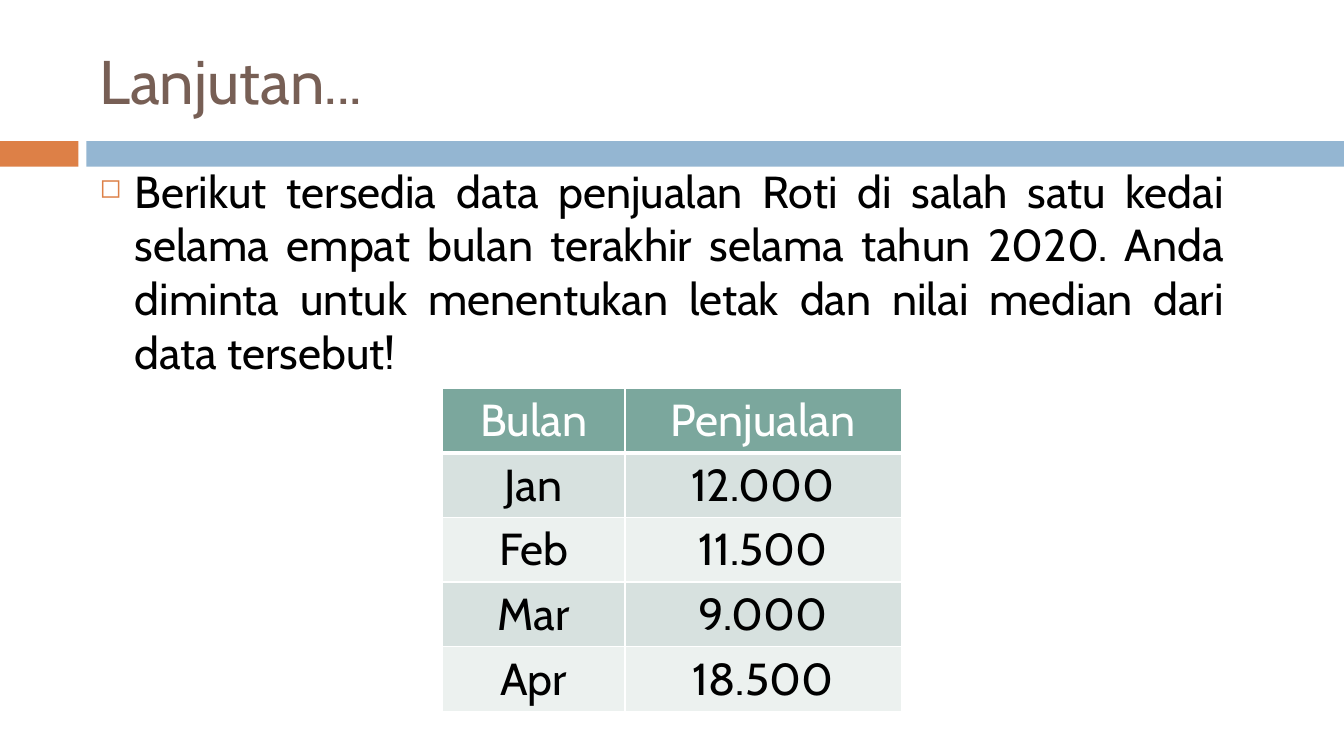
from lxml import etree
from pptx import Presentation
from pptx import util as u
from pptx.dml.color import RGBColor
from pptx.enum import shapes, text
from pptx.oxml.ns import qn

FONT = "Cabin"
WHITE, BLACK = "FFFFFF", "000000"
ORANGE, BLUE, BROWN = "DD8047", "94B6D2", "775F55"
HEADER, BANDS = "7BA79D", ("D7E1DF", "ECF1EF")

QUESTION = (
    "Berikut tersedia data penjualan Roti di salah satu kedai selama empat "
    "bulan terakhir selama tahun 2020. Anda diminta untuk menentukan letak "
    "dan nilai median dari data tersebut!"
)
SALES = [
    ("Bulan", "Penjualan"),
    ("Jan", "12.000"),
    ("Feb", "11.500"),
    ("Mar", "9.000"),
    ("Apr", "18.500"),
]


def color(value):
    return RGBColor.from_string(value)


def style(paragraph, size, hex_color, alignment):
    paragraph.alignment = alignment
    paragraph.font.name = FONT
    paragraph.font.size = u.Pt(size)
    paragraph.font.color.rgb = color(hex_color)


def add_bar(slide, left, width, fill):
    bar = slide.shapes.add_shape(
        shapes.MSO_SHAPE.RECTANGLE, u.Cm(left), u.Cm(3.56), u.Cm(width), u.Cm(0.64))
    bar.shadow.inherit = False
    bar.fill.solid()
    bar.fill.fore_color.rgb = color(fill)
    bar.line.fill.background()


def add_text(slide, box, content, size, hex_color, alignment, anchor):
    frame = slide.shapes.add_textbox(*map(u.Cm, box)).text_frame
    frame.word_wrap = True
    frame.vertical_anchor = anchor
    paragraph = frame.paragraphs[0]
    paragraph.text = content
    style(paragraph, size, hex_color, alignment)
    return paragraph


def add_bullet(paragraph, character, hex_color, percent, indent):
    paragraph.space_before = u.Pt(7)
    properties = paragraph._p.get_or_add_pPr()
    properties.set("marL", str(u.Cm(indent)))
    properties.set("indent", str(-u.Cm(indent)))
    bullet_color = etree.SubElement(properties, qn("a:buClr"))
    etree.SubElement(bullet_color, qn("a:srgbClr"), val=hex_color)
    etree.SubElement(properties, qn("a:buSzPct"), val=str(percent * 1000))
    etree.SubElement(properties, qn("a:buChar"), char=character)


def set_borders(cell, bottom_width):
    properties = cell._tc.get_or_add_tcPr()
    widths = {"a:lnL": 1, "a:lnR": 1, "a:lnT": 1, "a:lnB": bottom_width}
    for position, (side, width) in enumerate(widths.items()):
        line = etree.Element(qn(side), w=str(u.Pt(width)))
        fill = etree.SubElement(line, qn("a:solidFill"))
        etree.SubElement(fill, qn("a:srgbClr"), val=WHITE)
        properties.insert(position, line)


def add_sales_table(slide, left, top, column_widths, row_height):
    table = slide.shapes.add_table(
        len(SALES), len(column_widths), u.Cm(left), u.Cm(top),
        u.Cm(sum(column_widths)), u.Cm(row_height * len(SALES))).table
    for column, width in zip(table.columns, column_widths):
        column.width = u.Cm(width)
    for row, values in enumerate(SALES):
        is_header = row == 0
        for column, value in enumerate(values):
            cell = table.cell(row, column)
            cell.text = value
            cell.fill.solid()
            cell.fill.fore_color.rgb = color(HEADER if is_header else BANDS[(row - 1) % 2])
            paragraph = cell.text_frame.paragraphs[0]
            style(paragraph, 32, WHITE if is_header else BLACK, text.PP_ALIGN.CENTER)
            paragraph.font.bold = False
            set_borders(cell, 3 if is_header else 1)


def main():
    presentation = Presentation()
    presentation.slide_width = u.Cm(33.87)
    presentation.slide_height = u.Cm(19.05)
    slide = presentation.slides.add_slide(presentation.slide_layouts[6])

    # Divider bars
    add_bar(slide, 0, 1.98, ORANGE)
    add_bar(slide, 2.18, 31.69, BLUE)

    # Title and question
    add_text(slide, (2.26, 0.64, 30.2, 2.74), "Lanjutan...", 44, BROWN,
             text.PP_ALIGN.LEFT, text.MSO_ANCHOR.MIDDLE)
    question = add_text(slide, (2.26, 3.99, 28.86, 5.74), QUESTION, 32, BLACK,
                        text.PP_ALIGN.JUSTIFY, text.MSO_ANCHOR.TOP)
    add_bullet(question, "◻", ORANGE, 60, 0.89)

    # Monthly sales
    add_sales_table(slide, 11.15, 9.78, (4.6, 6.96), 1.63)

    presentation.save("out.pptx")


if __name__ == "__main__":
    main()
